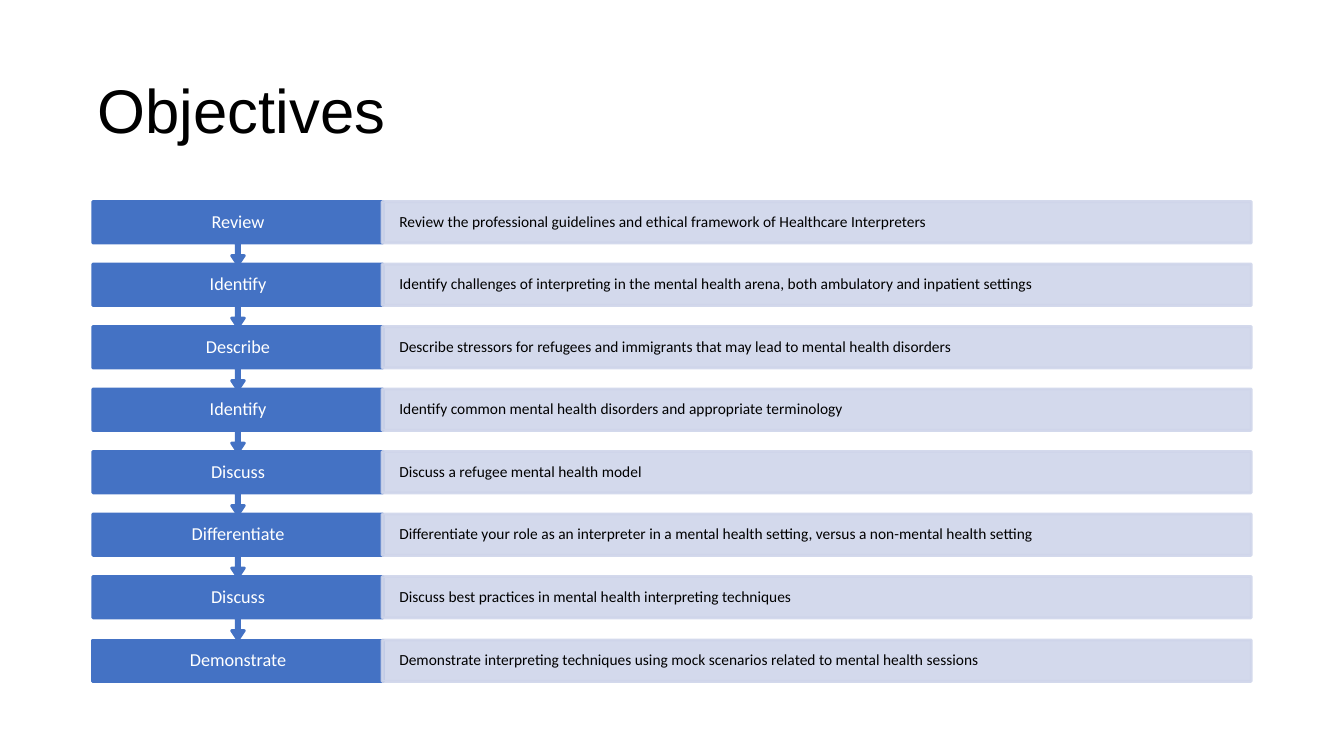
from lxml import etree
from pptx import Presentation
from pptx.dml.color import RGBColor
from pptx.enum.shapes import MSO_SHAPE
from pptx.enum.text import MSO_ANCHOR, MSO_AUTO_SIZE, PP_ALIGN
from pptx.oxml.ns import qn
from pptx.util import Pt

RECTANGLE = MSO_SHAPE.RECTANGLE
CALLOUT = MSO_SHAPE.UP_ARROW_CALLOUT
MIDDLE = MSO_ANCHOR.MIDDLE
NO_FIT = MSO_AUTO_SIZE.NONE
LEFT = PP_ALIGN.LEFT
CENTER = PP_ALIGN.CENTER

EMU_PER_PX = 9144
BLUE, PALE, WHITE, BLACK = "4472C4", "CFD5EA", "FFFFFF", "000000"

OBJECTIVES = [
    ("Review", "Review the professional guidelines and ethical framework of Healthcare Interpreters"),
    ("Identify", "Identify challenges of interpreting in the mental health arena, both ambulatory and inpatient settings"),
    ("Describe", "Describe stressors for refugees and immigrants that may lead to mental health disorders"),
    ("Identify", "Identify common mental health disorders and appropriate terminology"),
    ("Discuss", "Discuss a refugee mental health model"),
    ("Differentiate", "Differentiate your role as an interpreter in a mental health setting, versus a non-mental health setting"),
    ("Discuss", "Discuss best practices in mental health interpreting techniques"),
    ("Demonstrate", "Demonstrate interpreting techniques using mock scenarios related to mental health sessions"),
]

TITLE_FORMAT = {"size": Pt(44), "name": "Arial"}
VERB_FORMAT = {"size": Pt(13), "name": "Calibri"}
DETAIL_FORMAT = {"size": Pt(11), "name": "Calibri"}

FIRST_TOP, LAST_TOP = 200, 635
ROW_HEIGHT, CALLOUT_HEIGHT = 41, 63
VERB_LEFT, VERB_WIDTH = 92, 288
DETAIL_LEFT, DETAIL_WIDTH = 379, 862


def px(length):
    return length * EMU_PER_PX


def color(code):
    return RGBColor.from_string(code)


class ObjectivesPage:
    def __init__(self, deck):
        self.page = deck.slides.add_slide(deck.slide_layouts[5])

    def set_text(self, box, text, style, ink, align, insets):
        frame = box.text_frame
        side, edge = map(px, insets)
        frame_format = {
            "word_wrap": True, "auto_size": NO_FIT, "vertical_anchor": MIDDLE,
            "margin_left": side, "margin_right": side,
            "margin_top": edge, "margin_bottom": edge,
        }
        for key, value in frame_format.items():
            setattr(frame, key, value)
        para = frame.paragraphs[0]
        para.alignment = align
        para.line_spacing = 0.9
        span = para.add_run()
        span.text = text
        for key, value in style.items():
            setattr(span.font, key, value)
        span.font.color.rgb = color(ink)

    def title(self, text, area):
        box = self.page.shapes.title
        box.left, box.top, box.width, box.height = map(px, area)
        self.set_text(box, text, TITLE_FORMAT, BLACK, LEFT, (5, 5))

    def shape(self, kind, area, paint, opacity=100):
        shape = self.page.shapes.add_shape(kind, *map(px, area))
        shape.shadow.inherit = False
        shape.fill.solid()
        shape.fill.fore_color.rgb = color(paint)
        shape.line.color.rgb = color(paint)
        shape.line.width = Pt(2)
        if opacity < 100:
            for element in shape._element.spPr.iter(qn("a:srgbClr")):
                etree.SubElement(element, qn("a:alpha"), val=str(opacity * 1000))
        return shape

    def callout(self, area):
        shape = self.shape(CALLOUT, area, BLUE)
        shape.rotation = 180
        for index, value in enumerate((0.05, 0.1, 0.15, 0.65)):
            shape.adjustments[index] = value

    def verb(self, text, top, is_last):
        area = (VERB_LEFT, top, VERB_WIDTH, ROW_HEIGHT)
        if is_last:
            self.shape(RECTANGLE, area, BLUE)
        else:
            self.callout((VERB_LEFT, top, VERB_WIDTH, CALLOUT_HEIGHT))
        box = self.page.shapes.add_textbox(*map(px, area))
        self.set_text(box, text, VERB_FORMAT, WHITE, CENTER, (20, 10))

    def detail(self, text, top):
        area = (DETAIL_LEFT, top, DETAIL_WIDTH, ROW_HEIGHT)
        bar = self.shape(RECTANGLE, area, PALE, 90)
        self.set_text(bar, text, DETAIL_FORMAT, BLACK, LEFT, (17, 15))


def main():
    deck = Presentation()
    deck.slide_width, deck.slide_height = px(1333), px(750)
    page = ObjectivesPage(deck)
    page.title("Objectives", (92, 40, 1150, 145))
    last = len(OBJECTIVES) - 1
    for row in range(last, -1, -1):
        verb, detail = OBJECTIVES[row]
        top = FIRST_TOP + (LAST_TOP - FIRST_TOP) * row // last
        page.verb(verb, top, row == last)
        page.detail(detail, top)
    deck.save("out.pptx")


if __name__ == "__main__":
    main()
